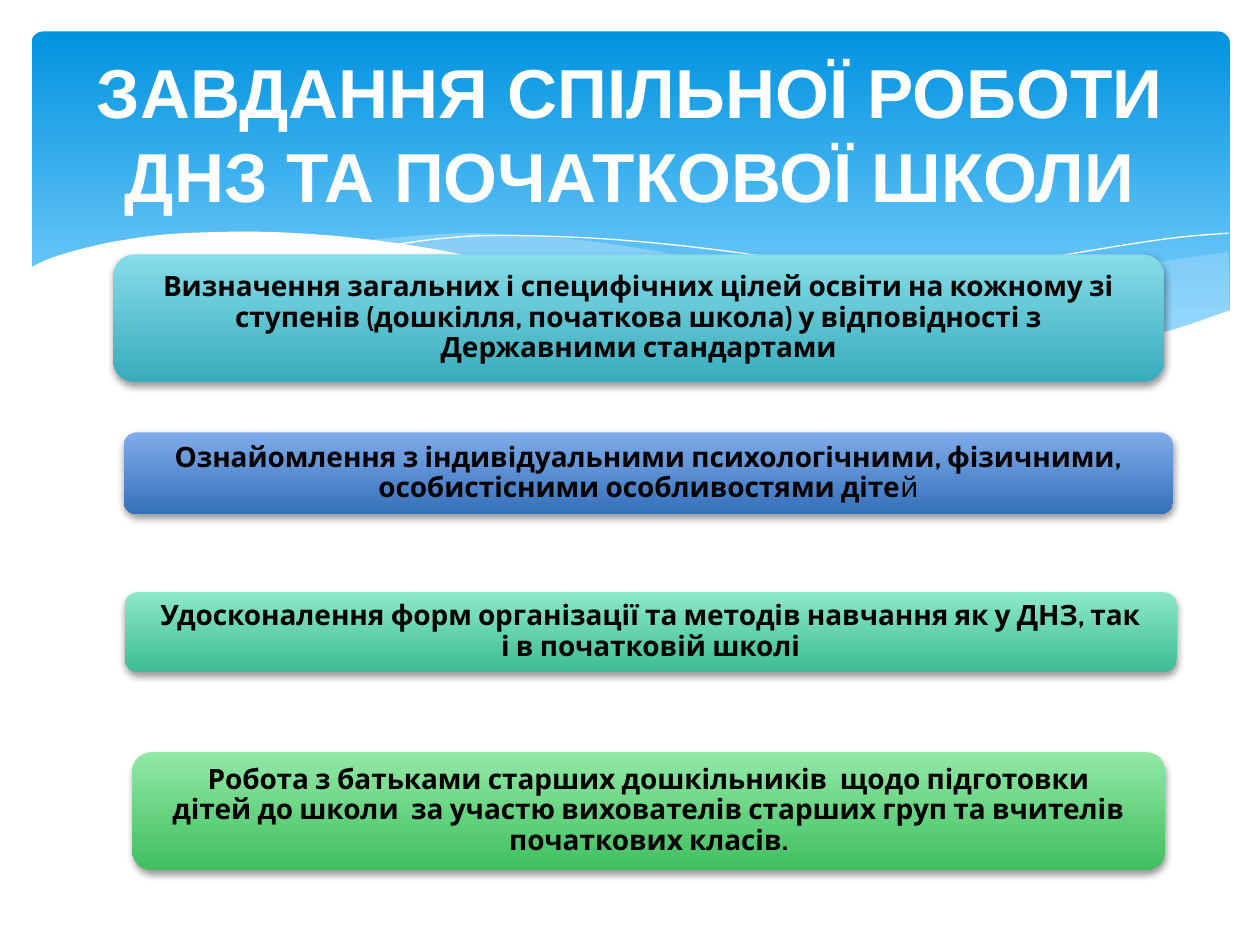
from lxml.etree import SubElement
from pptx import Presentation
from pptx.dml.color import RGBColor
from pptx.enum.shapes import MSO_SHAPE
from pptx.enum.text import MSO_ANCHOR, MSO_AUTO_SIZE, PP_ALIGN
from pptx.oxml.ns import qn
from pptx.util import Pt

# Knots of the wave outlines, in points
RIGHT = [
    [(702, 144), (655, 151), (620, 160.6), (561, 174.2), (508.3, 185), (476, 190.8)],
    [(476, 190.8), (527, 197.3), (570, 199.7), (607.7, 199.4), (640, 195.8),
     (668, 189.4), (702.7, 177.8)],
]
MIDDLE = [
    [(643, 196.6), (602.6, 190.8), (558, 182.9), (508.3, 172.8), (452.9, 159.8),
     (409.7, 149.8), (370, 142.6), (334.8, 137.5), (302.4, 134.6),
     (273.6, 133.2), (247.7, 133.9), (206, 137.5)],
    [(206, 137.5), (246.2, 143.3), (290.9, 151.9), (323.3, 159.8),
     (381.6, 172.8), (432.7, 183.6), (478.8, 191.5), (519.8, 197.3),
     (556.6, 199.4), (589, 200.2), (617, 199.4), (643, 196.6)],
]
LONG = [(222.5, 140.4), (247.7, 136.8), (278.6, 134.6), (324, 135.4),
        (367.2, 138.2), (419, 144), (478.8, 153.4), (523.4, 162.7),
        (572.4, 173.5), (625.7, 187.9), (653, 195.8)]
SHORT = [(441.4, 185), (500.4, 169.2), (558.7, 155.5), (601.9, 146.9),
         (644.4, 139.7), (675.4, 135.4), (702, 133.2)]
FRONT = [
    [(703.4, 177.1), (669.6, 188.6), (638.6, 195.1), (602.6, 198.7), (571, 198.7),
     (522.7, 195.8), (466.6, 188.6), (416.9, 180), (362.2, 167.8),
     (321.8, 158.4), (281.5, 149), (244.8, 141.8), (210.2, 136.8),
     (180, 133.9), (151.9, 132.5), (127.4, 132.5), (95, 133.9),
     (68.4, 137.5), (48.2, 141.8), (28.8, 147.6), (16.6, 153.4)],
    [(16.6, 236.9), (703.4, 236.9)],
]

# Box, top and bottom colour, bold text, plain text
CARDS = [
    ((64.8, 145.4, 600.5, 72.7), "86DCE9", "39ACBC",
     "Визначення загальних і специфічних цілей освіти на кожному зі ступенів "
     "(дошкілля, початкова школа) у відповідності з Державними стандартами", ""),
    ((70.6, 247, 599.8, 46.8), "80ACEA", "3570BA",
     "Ознайомлення з індивідуальними психологічними, фізичними, "
     "особистісними особливостями діте", "й"),
    ((71.3, 338.4, 601.2, 45.4), "8CE8CA", "3DBD95",
     "Удосконалення форм організації та методів навчання як у ДНЗ, "
     "так і в початковій школі", ""),
    ((75.6, 429.8, 590.4, 67.3), "92E8A6", "41BF60",
     "Робота з батьками старших дошкільників  щодо підготовки дітей до школи  "
     "за участю вихователів старших груп та вчителів початкових класів.", ""),
]


def tint(hue):
    return RGBColor.from_string(hue)


def curve(knots, steps=4):
    """Points of a Catmull-Rom curve through the knots."""
    if len(knots) < 3:
        return knots
    ends = [knots[0], *knots, knots[-1]]
    dots = [knots[0]]
    for a, b, c, d in zip(ends, ends[1:], ends[2:], ends[3:]):
        for step in range(1, steps + 1):
            t = step / steps
            dots.append(tuple(
                (2 * q + (r - p) * t + (2 * p - 5 * q + 4 * r - s) * t ** 2
                 + (3 * q - p - 3 * r + s) * t ** 3) / 2
                for p, q, r, s in zip(a, b, c, d)))
    return dots


def trace(slide, edges, close):
    dots = [(Pt(x), Pt(y)) for edge in edges for x, y in curve(edge)]
    pen = slide.shapes.build_freeform(*dots[0], scale=1.0)
    pen.add_line_segments(dots[1:], close=close)
    shape = pen.convert_to_shape()
    shape.shadow.inherit = False
    return shape


def add_wave(slide, edges, hue, alpha=100):
    wave = trace(slide, edges, True)
    wave.line.fill.background()
    wave.fill.solid()
    wave.fill.fore_color.rgb = tint(hue)
    if alpha < 100:
        color = wave.fill._xPr.find(qn("a:solidFill"))[0]
        SubElement(color, qn("a:alpha"), val=str(alpha * 1000))


def add_stroke(slide, knots):
    stroke = trace(slide, [knots], False)
    stroke.fill.background()
    stroke.line.color.rgb = tint("FFFFFF")
    stroke.line.width = Pt(0)


def add_panel(slide, box, top, end, stop=1.0):
    """Add a rounded box shaded from top to end, which is reached at stop."""
    panel = slide.shapes.add_shape(MSO_SHAPE.ROUNDED_RECTANGLE, *map(Pt, box))
    panel.shadow.inherit = False
    panel.line.fill.background()
    panel.fill.gradient()
    panel.fill.gradient_angle = 270
    for mark, hue, place in zip(panel.fill.gradient_stops, (top, end), (0, stop)):
        mark.color.rgb = tint(hue)
        mark.position = place
    return panel


def add_glow(shape):
    """Cast a soft shadow straight down."""
    effects = shape._element.spPr.find(qn("a:effectLst"))
    shade = SubElement(effects, qn("a:outerShdw"), blurRad=str(Pt(4)),
                       dist=str(Pt(2)), dir="5400000", rotWithShape="0")
    color = SubElement(shade, qn("a:srgbClr"), val="000000")
    SubElement(color, qn("a:alpha"), val="38000")


def add_run(par, text, face, size, hue, bold=True):
    run = par.add_run()
    run.text = text
    run.font.name = face
    run.font.size = Pt(size)
    run.font.bold = bold
    run.font.color.rgb = tint(hue)


def set_frame(frame):
    frame.word_wrap = True
    frame.auto_size = MSO_AUTO_SIZE.NONE
    frame.vertical_anchor = MSO_ANCHOR.MIDDLE
    par = frame.paragraphs[0]
    par.alignment = PP_ALIGN.CENTER
    return par


def add_card(slide, box, top, end, strong, plain):
    card = add_panel(slide, box, top, end)
    add_glow(card)
    frame = card.text_frame
    frame.margin_left = frame.margin_right = Pt(16.5)
    frame.margin_top = frame.margin_bottom = Pt(0)
    par = set_frame(frame)
    par.line_spacing = 0.9
    add_run(par, strong, "Cabin", 16, "000000")
    if plain:
        add_run(par, plain, "Cabin", 16, "000000", False)


def set_title(slide, text):
    title = slide.shapes.title
    title.left, title.top, title.width, title.height = map(Pt, (36, 26.6, 648, 98.6))
    add_run(set_frame(title.text_frame), text, "Arial", 39.6, "FFFFFF")
    slide.shapes._spTree.append(title._element)  # bring to the front


def main():
    deck = Presentation()
    deck.slide_width, deck.slide_height = Pt(720), Pt(540)
    slide = deck.slides.add_slide(deck.slide_layouts[5])
    banner = add_panel(slide, (18, 18, 684.7, 194.4), "0293E0", "83D3FE", 0.9)
    banner.adjustments[0] = 0.034
    add_wave(slide, RIGHT, "C6E7FC", 29)
    add_wave(slide, MIDDLE, "C6E7FC", 40)
    add_stroke(slide, LONG)
    add_stroke(slide, SHORT)
    add_wave(slide, FRONT, "FFFFFF")
    set_title(slide, "ЗАВДАННЯ СПІЛЬНОЇ РОБОТИ ДНЗ ТА ПОЧАТКОВОЇ ШКОЛИ")
    for card in CARDS:
        add_card(slide, *card)
    deck.save("out.pptx")


if __name__ == "__main__":
    main()
